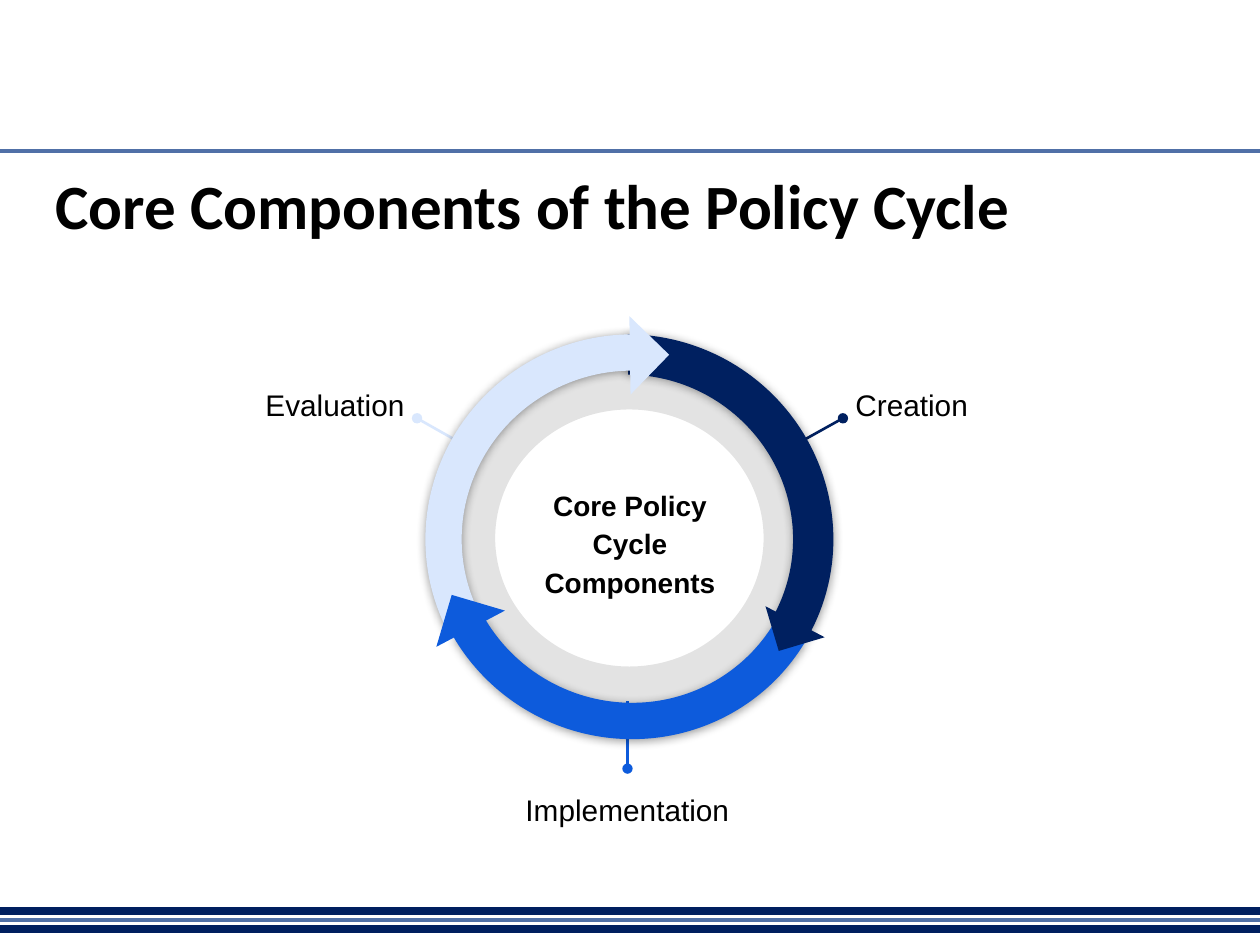
"""Build a slide showing the policy cycle as a ring of three arrows."""
from lxml import etree
from pptx import Presentation
from pptx.dml.color import RGBColor
from pptx.enum.shapes import MSO_CONNECTOR, MSO_SHAPE
from pptx.enum.text import MSO_ANCHOR, MSO_AUTO_SIZE, PP_ALIGN
from pptx.oxml.ns import qn
from pptx.util import Inches, Pt

STRAIGHT = MSO_CONNECTOR.STRAIGHT
ARC, DONUT, TRIANGLE = MSO_SHAPE.BLOCK_ARC, MSO_SHAPE.DONUT, MSO_SHAPE.RIGHT_TRIANGLE
TOP, MIDDLE = MSO_ANCHOR.TOP, MSO_ANCHOR.MIDDLE
LEFT, CENTER, RIGHT = PP_ALIGN.LEFT, PP_ALIGN.CENTER, PP_ALIGN.RIGHT
NO_AUTOFIT = MSO_AUTO_SIZE.NONE
COLUMNS, ROWS, CELL = 100, 75, 0.1
TITLE_ONLY = 5
NAVY, BLUE, PALE = "002060", "0D5BDC", "D9E7FD"
BAND, STEEL, BLACK = "001F5F", "5070A7", "000000"
RING = (33.7, 26.6, 32.5, 32)


def color(code):
    """Turn a hex string into a colour."""
    return RGBColor.from_string(code)


def grid(*cells):
    """Turn counts of grid cells into lengths."""
    return [Inches(cell * CELL) for cell in cells]


def add_node(parent, tag, **attributes):
    """Append a drawing element with the given attributes."""
    node = etree.SubElement(parent, qn(tag))
    for name, value in attributes.items():
        node.set(name, str(value))
    return node


def write(frame, text, *, size, font="Arial", bold=False, align=LEFT, anchor=TOP, spacing=1.0):
    """Fill a text frame with one formatted paragraph."""
    frame.word_wrap = True
    frame.auto_size = NO_AUTOFIT
    frame.vertical_anchor = anchor
    frame.margin_left = frame.margin_right = Inches(0.1)
    frame.margin_top = frame.margin_bottom = Inches(0.1)
    para = frame.paragraphs[0]
    para.alignment = align
    para.line_spacing = spacing
    span = para.add_run()
    span.text = text
    span.font.name = font
    span.font.size = Pt(size)
    span.font.bold = bold
    span.font.color.rgb = color(BLACK)


class CyclePage:
    """Hold the label style and the page being drawn."""

    label_size, spacing = 17, 1.15

    def __init__(self, deck):
        """Add a page with a title placeholder."""
        self.page = deck.slides.add_slide(deck.slide_layouts[TITLE_ONLY])
        self.shapes = self.page.shapes

    def title(self, text, place):
        """Move and fill the title placeholder."""
        box = self.shapes.title
        box.left, box.top, box.width, box.height = grid(*place)
        write(box.text_frame, text, size=36, font="Calibri", bold=True)

    def label(self, text, place, **style):
        """Add a text box."""
        box = self.shapes.add_textbox(*grid(*place))
        write(box.text_frame, text, **{"size": self.label_size, "spacing": self.spacing, **style})
        return box

    def line(self, start, end, code, width):
        """Add a straight line without a shadow."""
        line = self.shapes.add_connector(STRAIGHT, *grid(*start, *end))
        line.line.color.rgb = color(code)
        line.line.width = Pt(width)
        add_node(line._element.spPr, "a:effectLst")
        return line

    def leader(self, start, end, code, box, site=None):
        """Add a line with a dot at its start, joined to a box side if given."""
        line = self.line(start, end, code, 1.5)
        add_node(line.line._get_or_add_ln(), "a:headEnd", type="oval")
        if site is not None:
            line.begin_connect(box, site)

    def shape(self, kind, place, code, turn=0, adjust=()):
        """Add a plain filled shape."""
        shape = self.shapes.add_shape(kind, *grid(*place))
        shape.shadow.inherit = False
        shape.fill.solid()
        shape.fill.fore_color.rgb = color(code)
        shape.line.fill.background()
        shape.rotation = turn
        for index, value in enumerate(adjust):
            shape.adjustments[index] = value
        return shape

    def donut(self, place, code, thickness, opacity):
        """Add a see-through ring."""
        ring = self.shape(DONUT, place, code, adjust=[thickness])
        fill = ring._element.spPr.find(qn("a:solidFill"))
        add_node(fill[0], "a:alpha", val=opacity * 1000)

    def arc(self, code, turn, adjust, flip=False):
        """Add a shadowed arc of the cycle."""
        properties = self.shape(ARC, RING, code, turn, adjust)._element.spPr
        if flip:
            properties.find(qn("a:xfrm")).set("flipH", "1")
        shadow = add_node(properties.find(qn("a:effectLst")), "a:outerShdw", blurRad=Pt(5.6),
                          dist=Pt(0.8), dir=90 * 60000, algn="t", rotWithShape=0)
        add_node(add_node(shadow, "a:srgbClr", val=BLACK), "a:alpha", val=40000)


def main():
    """Build and save the deck."""
    deck = Presentation()
    deck.slide_width, deck.slide_height = grid(COLUMNS, ROWS)
    cycle = CyclePage(deck)

    for row, code, width in [(72.3, BAND, 4.5), (73, STEEL, 2.25), (73.7, BAND, 4.5), (12, STEEL, 2.25)]:
        cycle.line((0, row), (COLUMNS, row), code, width)
    cycle.title("Core Components of the Policy Cycle", (3.4, 12.2, 93.2, 6.3))
    cycle.donut((34.5, 27.7, 30.9, 30), BLACK, 0.16, 11)

    stages = [
        ("Evaluation", (14.9, 29.3, 18.2, 7.8), RIGHT, PALE, (33.1, 33.2), (38.4, 36.2), 3),
        ("Creation", (66.9, 29.3, 18.2, 7.8), LEFT, NAVY, (66.9, 33.2), (61.5, 36.2), 1),
        ("Implementation", (36.5, 61.4, 26.6, 7.9), CENTER, BLUE, (49.8, 61), (49.8, 55.6), None),
    ]
    for text, place, align, code, start, end, site in stages:
        box = cycle.label(text, place, align=align)
        cycle.leader(start, end, code, box, site)
    cycle.label("Core Policy Cycle Components", (41.2, 38.2, 17.6, 9.5),
                size=16, bold=True, align=CENTER, anchor=MIDDLE)

    cycle.arc(NAVY, 29.3, (144.14, 0.01, 0.1))
    cycle.arc(PALE, 330.7, (143.49, 214.73, 0.09), flip=True)
    cycle.shape(TRIANGLE, (47.8, 26, 4.4, 4.4), PALE, 224.1)
    cycle.arc(BLUE, 209.2, (143.16, 215.03, 0.09), flip=True)
    cycle.shape(TRIANGLE, (61.2, 47.5, 3.8, 3.7), NAVY, 343.4)
    cycle.shape(TRIANGLE, (35.2, 47.7, 4.3, 4.4), BLUE, 106.5)
    deck.save("out.pptx")


if __name__ == "__main__":
    main()
